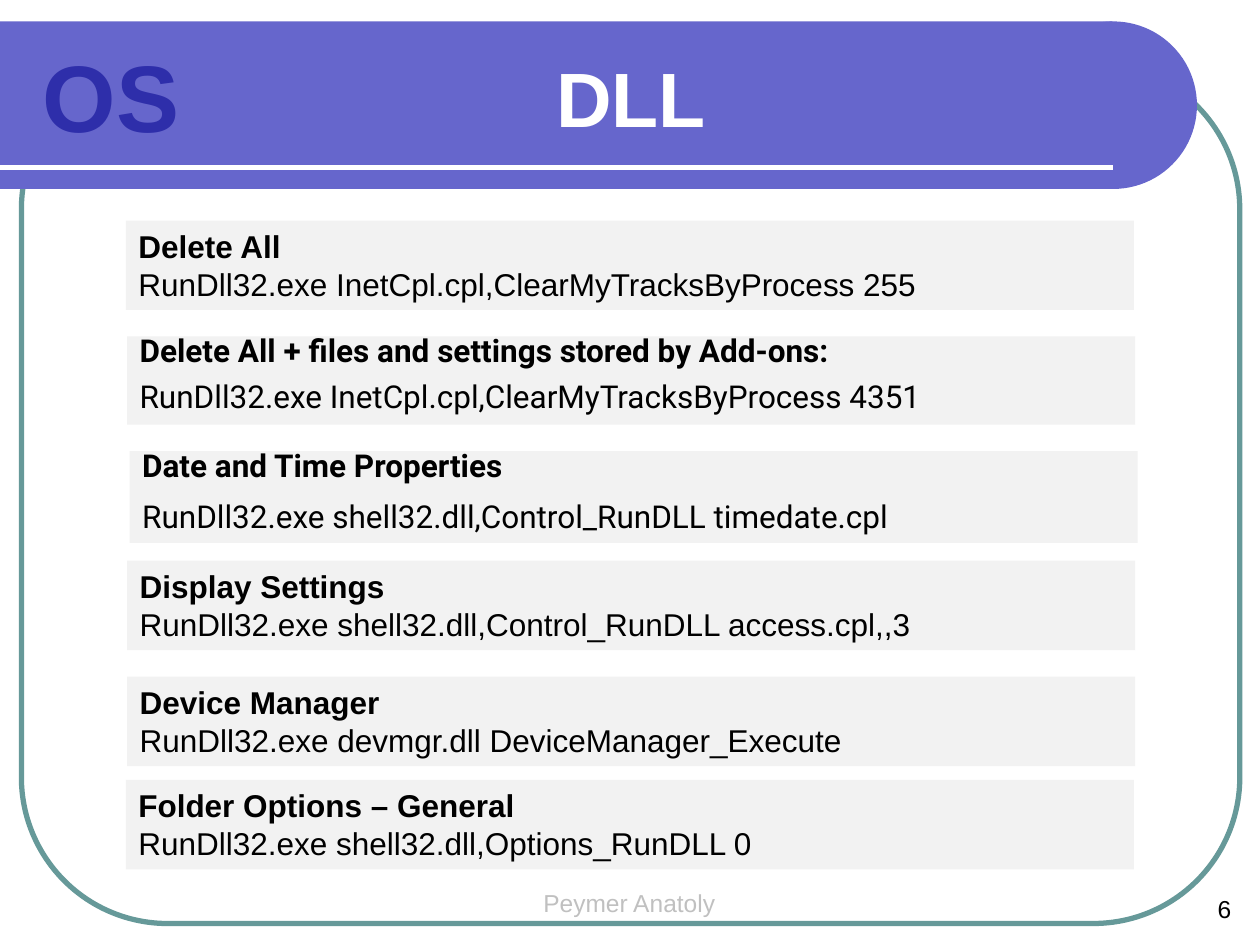
"""Build the DLL slide: a rounded frame, a title banner and six command panels."""
from dataclasses import dataclass

from lxml import etree
from pptx import Presentation
from pptx import util as u
from pptx.dml.color import RGBColor
from pptx.enum import shapes, text
from pptx.oxml.ns import qn


@dataclass(frozen=True)
class Theme:
    violet: str = "6666CC"
    navy: str = "2E2EAA"
    teal: str = "669999"
    panel: str = "F2F2F2"
    white: str = "FFFFFF"
    black: str = "000000"
    silver: str = "C0C0C0"
    font: str = "Arial"
    web_font: str = "Roboto"
    mark: int = 54
    title: int = 44
    body: int = 18
    small: int = 14
    stroke: int = 3


T = Theme()
LEFT, CENTER, RIGHT, JUSTIFY = (
    text.PP_ALIGN.LEFT, text.PP_ALIGN.CENTER, text.PP_ALIGN.RIGHT, text.PP_ALIGN.JUSTIFY)
MIDDLE = text.MSO_ANCHOR.MIDDLE
PANEL_W = 8

STYLES = {
    "plain": (T.font, [(LEFT, 21.6, 0), (LEFT, 21.6, 0)]),
    "web": (T.web_font, [(JUSTIFY, 15, 7.5), (JUSTIFY, 18.8, 0)]),
    "mixed": (T.web_font, [(JUSTIFY, 15, 7.5), (LEFT, None, 0)]),
}
PANELS = [
    (1, 1.75, 0.71, "plain", "Delete All",
     "RunDll32.exe InetCpl.cpl,ClearMyTracksByProcess 255"),
    (1.01, 2.67, 0.7, "web", "Delete All + files and settings stored by Add-ons:",
     "RunDll32.exe InetCpl.cpl,ClearMyTracksByProcess 4351"),
    (1.03, 3.58, 0.73, "mixed", "Date and Time Properties",
     "RunDll32.exe shell32.dll,Control_RunDLL timedate.cpl"),
    (1.01, 4.45, 0.71, "plain", "Display Settings",
     "RunDll32.exe shell32.dll,Control_RunDLL access.cpl,,3"),
    (1.01, 5.37, 0.71, "plain", "Device Manager",
     "RunDll32.exe devmgr.dll DeviceManager_Execute"),
    (1, 6.19, 0.71, "plain", "Folder Options – General",
     "RunDll32.exe shell32.dll,Options_RunDLL 0"),
]
LABELS = [
    ((4.08, 7, 1.83, 0.35), "Peymer Anatoly", T.small, T.silver, CENTER, False),
    ((9.2, 7.05, 0.67, 0.33), "6", T.small, T.black, RIGHT, False),
    ((0.17, 0.25, 1.42, 1.01), "OS", T.mark, T.navy, CENTER, True),
]
BANNER = [
    (shapes.MSO_SHAPE.RECTANGLE, (0, 0.17, 8.83, 1.33)),
    (shapes.MSO_SHAPE.OVAL, (8.17, 0.17, 1.33, 1.33)),
]


def inches(box):
    return [u.Inches(v) for v in box]


def add_run(p, words, size, color, bold=False, font=T.font):
    r = p.add_run()
    r.text = words
    r.font.size, r.font.bold, r.font.name = u.Pt(size), bold, font
    r.font.color.rgb = RGBColor.from_string(color)


def add_shape(s, kind, box, fill=None, line=None):
    sp = s.shapes.add_shape(kind, *inches(box))
    sp.shadow.inherit = False
    if fill:
        sp.fill.solid()
        sp.fill.fore_color.rgb = RGBColor.from_string(fill)
    else:
        sp.fill.background()
    if line:
        sp.line.color.rgb = RGBColor.from_string(line)
        sp.line.width = u.Pt(T.stroke)
    else:
        sp.line.fill.background()
    return sp


def add_rule(s, x1, x2, y):
    line = s.shapes.add_connector(shapes.MSO_CONNECTOR.STRAIGHT, *inches((x1, y, x2, y)))
    line.line.color.rgb = RGBColor.from_string(T.white)
    line.line.width = u.Pt(T.stroke)
    etree.SubElement(line._element.spPr, qn("a:effectLst"))


def add_title(s, words, box):
    title = s.shapes.title
    title.left, title.top, title.width, title.height = inches(box)
    tf = title.text_frame
    tf.word_wrap, tf.vertical_anchor = False, MIDDLE
    p = tf.paragraphs[0]
    p.alignment = CENTER
    add_run(p, words, T.title, T.white, True)
    s.shapes._spTree.append(title._element)


def add_label(s, box, words, size, color, align, bold):
    tf = s.shapes.add_textbox(*inches(box)).text_frame
    tf.word_wrap = True
    p = tf.paragraphs[0]
    p.alignment = align
    add_run(p, words, size, color, bold)


def add_panel(s, left, top, height, style, heading, command):
    sp = add_shape(s, shapes.MSO_SHAPE.RECTANGLE, (left, top, PANEL_W, height), T.panel)
    tf = sp.text_frame
    tf.word_wrap, tf.vertical_anchor = True, text.MSO_ANCHOR.TOP
    font, formats = STYLES[style]
    for i, (words, (align, spacing, after)) in enumerate(zip((heading, command), formats)):
        p = tf.add_paragraph() if i else tf.paragraphs[0]
        p.alignment, p.space_after = align, u.Pt(after)
        if spacing:
            p.line_spacing = u.Pt(spacing)
        add_run(p, words, T.body, T.black, i == 0, font)


def main():
    prs = Presentation()
    prs.slide_width, prs.slide_height = inches((10, 7.5))
    s = prs.slides.add_slide(prs.slide_layouts[5])
    frame = add_shape(s, shapes.MSO_SHAPE.ROUNDED_RECTANGLE,
                      (0.17, 0.5, 9.67, 6.83), line=T.teal)
    frame.adjustments[0] = 0.17
    for kind, box in BANNER:
        add_shape(s, kind, box, T.violet)
    add_rule(s, 0, 8.83, 1.33)
    add_title(s, "DLL", (3.26, 0.17, 3.5, 1.2))
    for label in LABELS:
        add_label(s, *label)
    for panel in PANELS:
        add_panel(s, *panel)
    prs.save("out.pptx")


if __name__ == "__main__":
    main()
